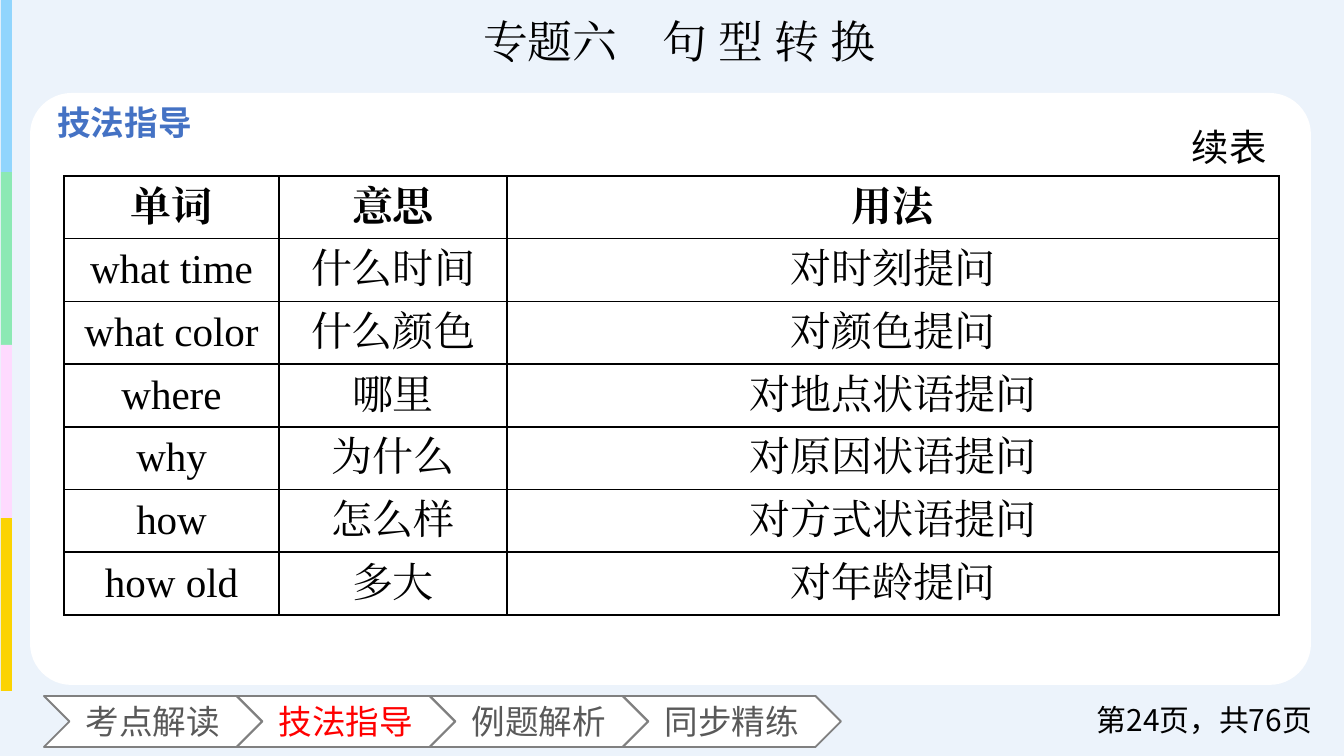
from dataclasses import dataclass
from typing import Optional

from lxml import etree
from pptx import Presentation
from pptx.dml.color import RGBColor
from pptx.enum.shapes import MSO_SHAPE as Shape
from pptx.enum.text import MSO_ANCHOR as Anchor, PP_ALIGN as Align
from pptx.oxml.ns import qn
from pptx.util import Emu, Pt

PX = 914400 / 134.4


@dataclass(frozen=True)
class Theme:
    sans: str = "Noto Sans CJK SC"
    serif: str = "Times New Roman"
    page: str = "ECF3FB"
    white: str = "FFFFFF"
    ink: str = "000000"
    heading: str = "4472C4"
    tab: str = "595959"
    tab_active: str = "FF0000"
    tab_line: str = "808080"
    stripes: tuple = ("91D5FD", "8CE9B4", "FEDAFE", "FBD302")
    title_size: int = 24
    cell_size: int = 22
    note_size: int = 20
    label_size: int = 18
    page_size: int = 16


@dataclass(frozen=True)
class Box:
    x: int
    y: int
    w: int
    h: int

    def emu(self) -> tuple:
        return tuple(px(v) for v in (self.x, self.y, self.w, self.h))


@dataclass(frozen=True)
class Style:
    size: int
    color: str
    font: str
    bold: bool = False
    align: Align = Align.LEFT


@dataclass(frozen=True)
class Label:
    box: Box
    text: str
    style: Style
    anchor: Anchor = Anchor.TOP


T = Theme()


def px(value: int) -> Emu:
    return Emu(round(value * PX))


def rgb(color: str) -> RGBColor:
    return RGBColor.from_string(color)


def set_text(tf, text: str, style: Style) -> None:
    tf.text = text
    p = tf.paragraphs[0]
    p.alignment = style.align
    for r in p.runs:
        r.font.size = Pt(style.size)
        r.font.bold = style.bold
        r.font.name = style.font
        r.font.color.rgb = rgb(style.color)
        ea = etree.SubElement(r.font._element, qn("a:ea"))
        ea.set("typeface", style.font)


def add_block(slide, kind: Shape, box: Box, fill: str, line: Optional[str] = None):
    sp = slide.shapes.add_shape(kind, *box.emu())
    sp.shadow.inherit = False
    sp.fill.solid()
    sp.fill.fore_color.rgb = rgb(fill)
    if line:
        sp.line.color.rgb = rgb(line)
        sp.line.width = Pt(1)
    else:
        sp.line.fill.background()
    return sp


def add_label(slide, label: Label) -> None:
    tf = slide.shapes.add_textbox(*label.box.emu()).text_frame
    tf.word_wrap = True
    tf.vertical_anchor = label.anchor
    set_text(tf, label.text, label.style)


def add_tab(slide, box: Box, text: str, color: str) -> None:
    sp = add_block(slide, Shape.CHEVRON, box, T.white, T.tab_line)
    tf = sp.text_frame
    tf.word_wrap = False
    tf.vertical_anchor = Anchor.MIDDLE
    tf.margin_left = tf.margin_right = tf.margin_top = tf.margin_bottom = 0
    set_text(tf, text, Style(T.label_size, color, T.sans, align=Align.CENTER))


def set_borders(cell, color: str) -> None:
    tc_pr = cell._tc.get_or_add_tcPr()
    for i, side in enumerate(("lnL", "lnR", "lnT", "lnB")):
        ln = etree.Element(qn(f"a:{side}"), w=str(Pt(1)))
        fill = etree.SubElement(ln, qn("a:solidFill"))
        etree.SubElement(fill, qn("a:srgbClr"), val=color)
        tc_pr.insert(i, ln)


def add_word_table(slide, box: Box, widths: tuple, rows: list) -> None:
    frame = slide.shapes.add_table(len(rows), len(widths), *box.emu())
    table = frame.table
    table.first_row = table.horz_banding = False
    for column, width in zip(table.columns, widths):
        column.width = px(width)
    for i, row in enumerate(rows):
        style = Style(T.cell_size, T.ink, T.serif, i == 0, Align.CENTER)
        for j, text in enumerate(row):
            cell = table.cell(i, j)
            cell.fill.background()
            cell.vertical_anchor = Anchor.MIDDLE
            cell.margin_left = cell.margin_right = 0
            cell.margin_top = cell.margin_bottom = 0
            set_text(cell.text_frame, text, style)
            set_borders(cell, T.ink)


WORDS = [
    ("单词", "意思", "用法"),
    ("what time", "什么时间", "对时刻提问"),
    ("what color", "什么颜色", "对颜色提问"),
    ("where", "哪里", "对地点状语提问"),
    ("why", "为什么", "对原因状语提问"),
    ("how", "怎么样", "对方式状语提问"),
    ("how old", "多大", "对年龄提问"),
]
TABS = ("考点解读", "技法指导", "例题解析", "同步精练")
ACTIVE = "技法指导"

LABELS = [
    Label(Box(237, 7, 884, 67), "专题六\u3000句 型 转 换".replace("\u3000", "　"),
          Style(T.title_size, T.ink, T.serif, align=Align.CENTER)),
    Label(Box(44, 95, 173, 54), ACTIVE,
          Style(T.label_size, T.heading, T.sans, bold=True)),
    Label(Box(1052, 700, 273, 40), "第24页，共76页",
          Style(T.page_size, T.ink, T.sans, align=Align.RIGHT), Anchor.MIDDLE),
    Label(Box(1152, 118, 128, 59), "续表",
          Style(T.note_size, T.ink, T.sans, align=Align.RIGHT)),
]


def main() -> None:
    prs = Presentation()
    prs.slide_width, prs.slide_height = px(1344), px(756)
    slide = prs.slides.add_slide(prs.slide_layouts[6])

    # Page background, side stripes and content card
    add_block(slide, Shape.RECTANGLE, Box(0, 0, 1344, 756), T.page)
    for i, color in enumerate(T.stripes):
        add_block(slide, Shape.RECTANGLE, Box(1, -1 + 173 * i, 11, 173), color)
    card = add_block(slide, Shape.ROUNDED_RECTANGLE, Box(30, 93, 1281, 592), T.white)
    card.adjustments[0] = 0.07

    # Navigation tabs
    for i, text in enumerate(TABS):
        color = T.tab_active if text == ACTIVE else T.tab
        add_tab(slide, Box(44 + 193 * i, 696, 218, 51), text, color)

    # Word table and labels
    add_word_table(slide, Box(64, 176, 1215, 439), (215, 228, 772), WORDS)
    for label in LABELS:
        add_label(slide, label)

    prs.save("out.pptx")


if __name__ == "__main__":
    main()
